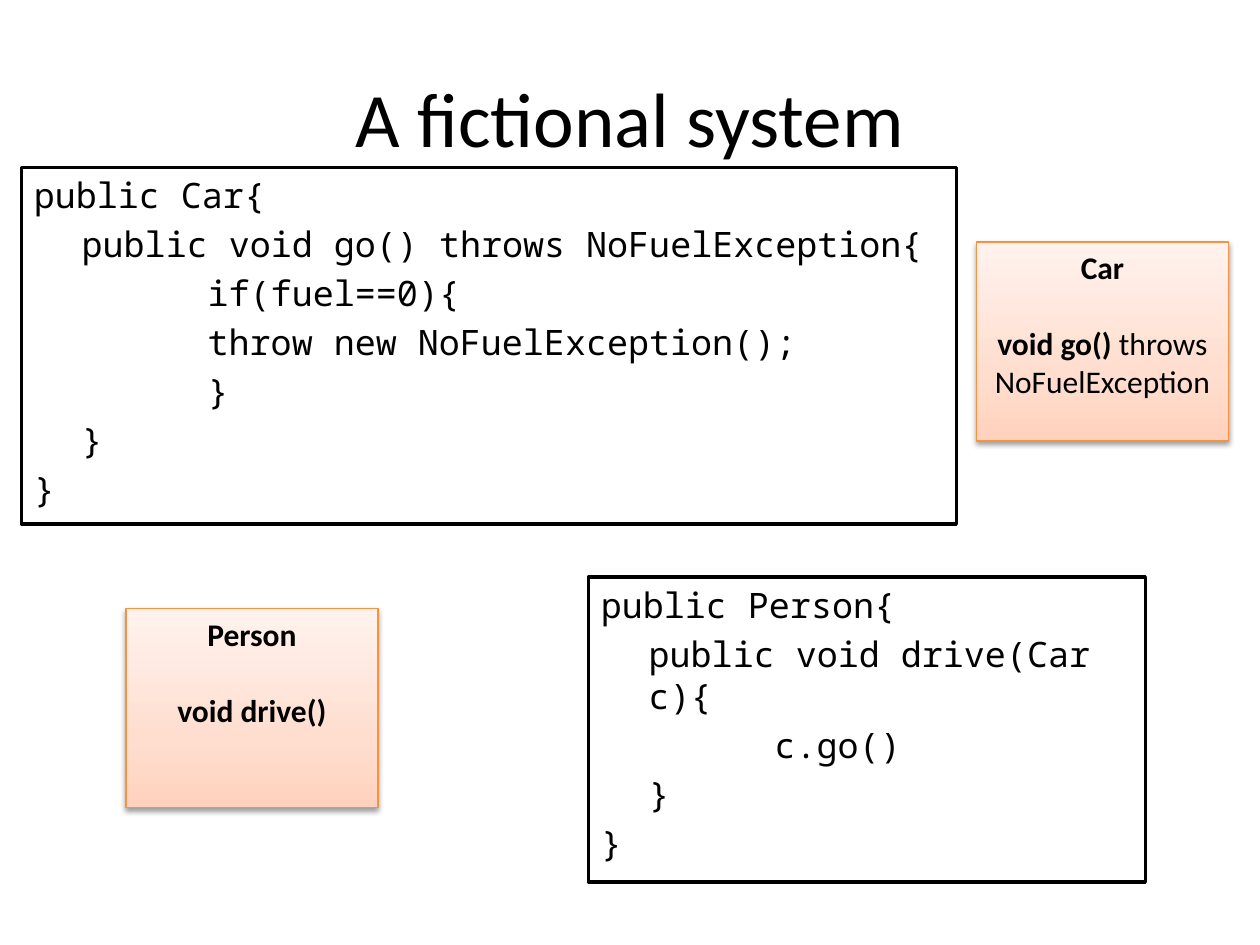
from dataclasses import dataclass

from lxml import etree
from pptx import Presentation
from pptx.dml.color import RGBColor
from pptx.enum.shapes import MSO_SHAPE
from pptx.enum.text import MSO_ANCHOR, PP_ALIGN
from pptx.oxml.ns import qn
from pptx.util import Inches, Pt

RECT = MSO_SHAPE.RECTANGLE
TOP, MIDDLE = MSO_ANCHOR.TOP, MSO_ANCHOR.MIDDLE
LEFT, CENTER = PP_ALIGN.LEFT, PP_ALIGN.CENTER


@dataclass(frozen=True)
class Theme:
    ink: str = "000000"
    paper: str = "FFFFFF"
    accent: str = "F69240"
    gradient: tuple = ((0, "FFD2BD"), (35, "FFDED0"), (100, "FFF2ED"))
    body_font: str = "Calibri"
    code_font: str = "Noto Sans Mono"
    title_size: int = 44
    class_size: int = 18
    code_size: int = 20
    class_gap: int = 22
    code_gap: int = 4
    indents: tuple = (0, 0.38, 1.38)  # left edge of each code level, inches


THEME = Theme()


@dataclass(frozen=True)
class ClassBox:
    left: float
    top: float
    name: str
    method: str
    suffix: str = ""


@dataclass(frozen=True)
class CodeBox:
    left: float
    top: float
    width: float
    height: float
    lines: tuple  # (level, code) pairs


CLASS_BOXES = (
    ClassBox(7.75, 1.92, "Car", "void go() ", "throws NoFuelException"),
    ClassBox(1, 4.83, "Person", "void drive()"),
)
CODE_BOXES = (
    CodeBox(0.17, 1.33, 7.42, 2.83, (
        (0, "public Car{"),
        (1, "public void go() throws NoFuelException{"),
        (2, "if(fuel==0){"),
        (2, "throw new NoFuelException();"),
        (2, "}"),
        (1, "}"),
        (0, "}"),
    )),
    CodeBox(4.67, 4.58, 4.42, 2.42, (
        (0, "public Person{"),
        (1, "public void drive(Car c){"),
        (2, "c.go()"),
        (1, "}"),
        (0, "}"),
    )),
)


def add_run(p, text: str, font: str, size: int, bold: bool = False) -> None:
    r = p.add_run()
    r.text = text
    for key, value in {"name": font, "size": Pt(size), "bold": bold}.items():
        setattr(r.font, key, value)
    r.font.color.rgb = RGBColor.from_string(THEME.ink)


def add_box(s, left: float, top: float, width: float, height: float,
            line: str, weight: float):
    sp = s.shapes.add_shape(RECT, Inches(left), Inches(top), Inches(width), Inches(height))
    sp.shadow.inherit = False
    sp.line.color.rgb = RGBColor.from_string(line)
    sp.line.width = Pt(weight)
    sp.text_frame.word_wrap = True
    sp.text_frame.vertical_anchor = TOP
    return sp


def add_color(parent, color: str):
    return etree.SubElement(parent, qn("a:srgbClr"), val=color)


def style_class_box(sp) -> None:
    # Upward three-stop gradient
    sp.fill.gradient()
    sp.fill.gradient_angle = 90
    spPr = sp.element.spPr
    stops = spPr.find(".//" + qn("a:gsLst"))
    for stop in list(stops):
        stops.remove(stop)
    for position, color in THEME.gradient:
        add_color(etree.SubElement(stops, qn("a:gs"), pos=str(position * 1000)), color)
    # Soft shadow below the box
    shadow = etree.SubElement(spPr.find(qn("a:effectLst")), qn("a:outerShdw"),
                              blurRad=str(Pt(3.1)), dist=str(Pt(1.6)),
                              dir="5400000", rotWithShape="0")
    etree.SubElement(add_color(shadow, THEME.ink), qn("a:alpha"), val="38000")


def draw_class(s, box: ClassBox) -> None:
    sp = add_box(s, box.left, box.top, 2, 1.58, THEME.accent, 0.75)
    style_class_box(sp)
    tf = sp.text_frame
    p = tf.paragraphs[0]
    p.alignment = CENTER
    add_run(p, box.name, THEME.body_font, THEME.class_size, True)
    p = tf.add_paragraph()
    p.alignment = CENTER
    p.space_before = Pt(THEME.class_gap)
    add_run(p, box.method, THEME.body_font, THEME.class_size, True)
    if box.suffix:
        add_run(p, box.suffix, THEME.body_font, THEME.class_size)


def draw_code(s, box: CodeBox) -> None:
    sp = add_box(s, box.left, box.top, box.width, box.height, THEME.ink, 2)
    sp.fill.solid()
    sp.fill.fore_color.rgb = RGBColor.from_string(THEME.paper)
    tf = sp.text_frame
    for i, (level, code) in enumerate(box.lines):
        p = tf.add_paragraph() if i else tf.paragraphs[0]
        p.alignment = LEFT
        p.space_before = Pt(THEME.code_gap)
        p._p.get_or_add_pPr().set("marL", str(Inches(THEME.indents[level])))
        add_run(p, code, THEME.code_font, THEME.code_size)


def draw_title(s, text: str) -> None:
    sp = s.shapes.title
    place = {"left": 0.5, "top": 0.3, "width": 9, "height": 1.25}
    for key, value in place.items():
        setattr(sp, key, Inches(value))
    tf = sp.text_frame
    tf.vertical_anchor = MIDDLE
    p = tf.paragraphs[0]
    p.alignment = CENTER
    add_run(p, text, THEME.body_font, THEME.title_size)


def main() -> None:
    prs = Presentation()
    prs.slide_width, prs.slide_height = Inches(10), Inches(7.5)
    s = prs.slides.add_slide(prs.slide_layouts[5])
    draw_title(s, "A fictional system")
    # Class summaries, then their source code
    for box in CLASS_BOXES:
        draw_class(s, box)
    for box in CODE_BOXES:
        draw_code(s, box)
    prs.save("out.pptx")


if __name__ == "__main__":
    main()
